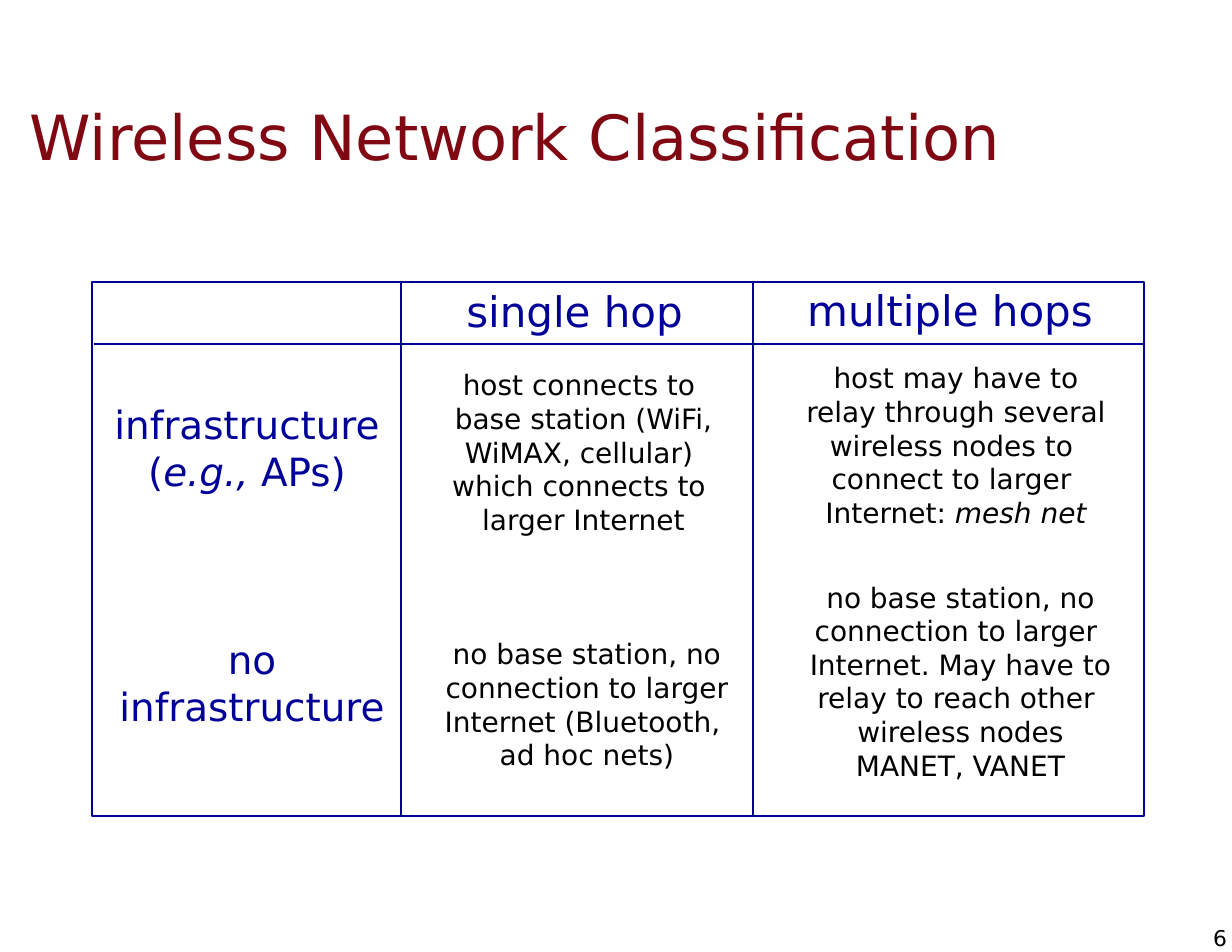
from lxml import etree
from pptx import Presentation
from pptx import util as u
from pptx.dml.color import RGBColor
from pptx.enum import shapes, text
from pptx.oxml.ns import qn

PX_PER_INCH = 112
BLUE, MAROON, BLACK = "000099", "7F0813", "000000"
LEFT, CENTER, RIGHT = text.PP_ALIGN.LEFT, text.PP_ALIGN.CENTER, text.PP_ALIGN.RIGHT
TOP, MIDDLE = text.MSO_ANCHOR.TOP, text.MSO_ANCHOR.MIDDLE


def px(length):
    """Turn px into EMU."""
    return u.Emu(round(length * u.Inches(1) / PX_PER_INCH))


def color(hex_string):
    return RGBColor.from_string(hex_string)


class SlideBuilder:
    font = "DejaVu Sans"
    line_width = u.Pt(1.5)
    insets = (12, 6)

    def __init__(self, presentation):
        self.slide = presentation.slides.add_slide(presentation.slide_layouts[6])

    def text(self, box, lines, size, fill, align=CENTER, anchor=TOP, insets=insets, wrap=False):
        """Add one paragraph per line; a line is a string or (string, italic) runs."""
        shape = self.slide.shapes.add_textbox(*map(px, box))
        frame = shape.text_frame
        frame.word_wrap = wrap
        frame.vertical_anchor = anchor
        frame.margin_left = frame.margin_right = px(insets[0])
        frame.margin_top = frame.margin_bottom = px(insets[1])
        for index, line in enumerate(lines):
            paragraph = frame.add_paragraph() if index else frame.paragraphs[0]
            paragraph.alignment = align
            for words, italic in [(line, False)] if isinstance(line, str) else line:
                run = paragraph.add_run()
                run.text = words
                run.font.name = self.font
                run.font.size = u.Pt(size)
                run.font.italic = italic
                run.font.color.rgb = color(fill)

    def stroke(self, shape):
        shape.line.color.rgb = color(BLUE)
        shape.line.width = self.line_width

    def frame(self, box):
        shape = self.slide.shapes.add_shape(shapes.MSO_SHAPE.RECTANGLE, *map(px, box))
        shape.shadow.inherit = False
        shape.fill.background()
        self.stroke(shape)

    def line(self, *ends):
        connector = self.slide.shapes.add_connector(
            shapes.MSO_CONNECTOR.STRAIGHT, *map(px, ends))
        self.stroke(connector)
        etree.SubElement(connector._element.spPr, qn("a:effectLst"))


def main():
    presentation = Presentation()
    presentation.slide_width, presentation.slide_height = u.Inches(11), u.Inches(8.5)
    builder = SlideBuilder(presentation)

    builder.text((18, 78, 1179, 116), ["Wireless Network Classification"],
                 40, MAROON, LEFT, MIDDLE, wrap=True)

    column_headings = [
        ((452, 279, 243, 64), "single hop"),
        ((793, 278, 312, 64), "multiple hops"),
    ]
    for box, heading in column_headings:
        builder.text(box, [heading], 27, BLUE, RIGHT)

    row_headings = [
        ((101, 395, 292, 106),
         ["infrastructure", [("(", False), ("e.g., ", True), ("APs)", False)]]),
        ((106, 630, 292, 106), ["no", "infrastructure"]),
    ]
    for box, lines in row_headings:
        builder.text(box, lines, 25, BLUE)

    cells = [
        ((438, 362, 291, 183),
         ["host connects to ", "base station (WiFi,", "WiMAX, cellular) ",
          "which connects to ", "larger Internet"]),
        ((431, 631, 312, 148),
         ["no base station, no", "connection to larger ", "Internet (Bluetooth, ",
          "ad hoc nets)"]),
        ((792, 355, 328, 183),
         ["host may have to", "relay through several", "wireless nodes to ",
          "connect to larger ", [("Internet: ", False), ("mesh net", True)]]),
        ((793, 574, 335, 216),
         ["no base station, no", "connection to larger ", "Internet. May have to",
          "relay to reach other ", "wireless nodes", "MANET, VANET"]),
    ]
    for box, lines in cells:
        builder.text(box, lines, 18, BLACK)

    left, top, width, height = grid = (92, 282, 1052, 534)
    builder.frame(grid)
    builder.line(left + 2, 344, left + width, 344)
    for column_x in (401, 753):
        builder.line(column_x, top, column_x, top + height)

    builder.text((1189, 924, 38, 27), ["6"], 14, BLACK, RIGHT, MIDDLE, insets=(0, 0))
    presentation.save("out.pptx")


if __name__ == "__main__":
    main()
